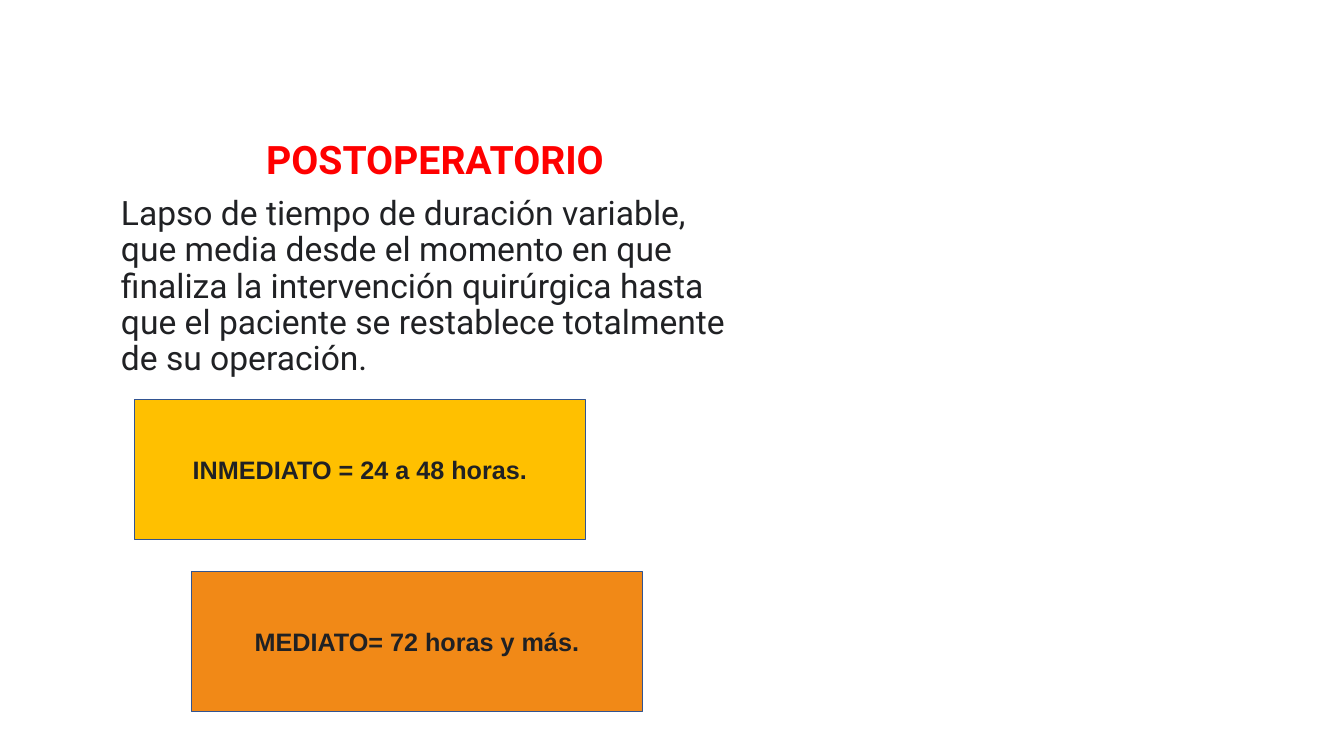
"""Build the slide that defines the postoperative period and its two stages."""
from lxml import etree
from pptx import Presentation
from pptx.dml.color import RGBColor
from pptx.enum.shapes import MSO_SHAPE
from pptx.enum.text import MSO_ANCHOR, MSO_AUTO_SIZE, PP_ALIGN
from pptx.oxml.ns import qn
from pptx.util import Pt

RECTANGLE = MSO_SHAPE.RECTANGLE
TOP, MIDDLE = MSO_ANCHOR.TOP, MSO_ANCHOR.MIDDLE
LEFT, CENTER = PP_ALIGN.LEFT, PP_ALIGN.CENTER
NO_AUTOFIT = MSO_AUTO_SIZE.NONE

COLORS = {
    "heading": "FF0000",
    "text": "202124",
    "immediate": "FFC000",
    "mediate": "F18917",
    "outline": "325491",
}
DEFINITION = (
    "Lapso de tiempo de duración variable, que media desde el momento en que "
    "finaliza la intervención quirúrgica hasta que el paciente se restablece "
    "totalmente de su operación."
)
STAGE_SIZE = (322.3, 100.2)
STAGES = [
    ("INMEDIATO = 24 a 48 horas.", "immediate", 96, 285.2),
    ("MEDIATO= 72 horas y más.", "mediate", 136.7, 408.1),
]


def color(name):
    return RGBColor.from_string(COLORS[name])


def remove_bullet(paragraph):
    properties = paragraph._p.get_or_add_pPr()
    properties.set("marL", "0")
    properties.set("indent", "0")
    etree.SubElement(properties, qn("a:buNone"))


def write(shape, text, font_name, size, color_name, align, anchor,
          bold=False, plain_list=False):
    frame = shape.text_frame
    frame.text = text
    frame.word_wrap = True
    frame.auto_size = NO_AUTOFIT
    frame.vertical_anchor = anchor
    paragraph = frame.paragraphs[0]
    if plain_list:
        remove_bullet(paragraph)
    paragraph.alignment = align
    paragraph.space_before = Pt(0)
    font = paragraph.font
    font.name = font_name
    font.size = Pt(size)
    font.bold = bold
    font.color.rgb = color(color_name)
    return paragraph


def place(shape, left, top, width, height):
    shape.left, shape.top = Pt(left), Pt(top)
    shape.width, shape.height = Pt(width), Pt(height)


def add_heading(slide):
    heading = slide.shapes.title
    place(heading, 70.6, 92.9, 480.2, 41.2)
    write(heading, "POSTOPERATORIO", "Roboto", 28, "heading", CENTER, TOP,
          bold=True)


def add_definition(slide):
    definition = slide.placeholders[1]
    place(definition, 79.2, 136.8, 462.2, 297.4)
    paragraph = write(definition, DEFINITION, "Roboto", 24, "text", LEFT, TOP,
                      plain_list=True)
    paragraph.line_spacing = 0.9


def add_stage(slide, text, fill_name, left, top):
    width, height = STAGE_SIZE
    stage = slide.shapes.add_shape(
        RECTANGLE, Pt(left), Pt(top), Pt(width), Pt(height))
    stage.shadow.inherit = False
    stage.fill.solid()
    stage.fill.fore_color.rgb = color(fill_name)
    stage.line.color.rgb = color("outline")
    stage.line.width = Pt(1)
    write(stage, text, "Arial", 18, "text", CENTER, MIDDLE, bold=True)


def main():
    presentation = Presentation()
    presentation.slide_width, presentation.slide_height = Pt(960), Pt(540)
    slide = presentation.slides.add_slide(presentation.slide_layouts[1])
    add_heading(slide)
    add_definition(slide)
    for stage in STAGES:
        add_stage(slide, *stage)
    presentation.save("out.pptx")


if __name__ == "__main__":
    main()
